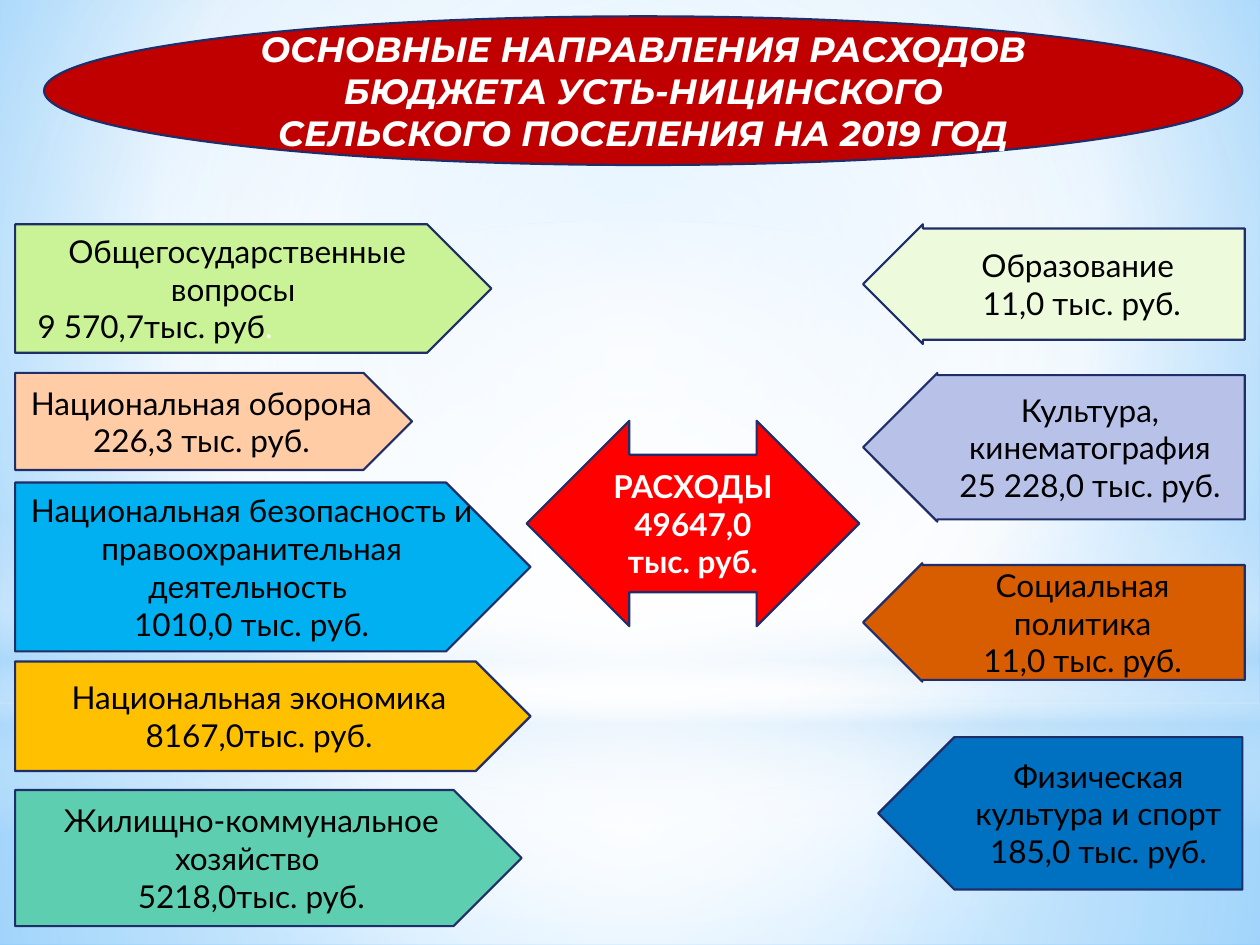
from dataclasses import dataclass

from lxml import etree
from pptx import Presentation
from pptx.dml.color import RGBColor
from pptx.enum.shapes import MSO_SHAPE
from pptx.enum.text import MSO_ANCHOR, MSO_AUTO_SIZE, PP_ALIGN
from pptx.oxml.ns import qn
from pptx.slide import Slide
from pptx.util import Inches, Pt

RECTANGLE, ELLIPSE = MSO_SHAPE.RECTANGLE, MSO_SHAPE.OVAL
PENTAGON, LEFT_ARROW = MSO_SHAPE.PENTAGON, MSO_SHAPE.LEFT_ARROW
DOUBLE_ARROW = MSO_SHAPE.LEFT_RIGHT_ARROW
MIDDLE, NO_FIT = MSO_ANCHOR.MIDDLE, MSO_AUTO_SIZE.NONE
CENTER, LEFT = PP_ALIGN.CENTER, PP_ALIGN.LEFT

BLACK = RGBColor(0x00, 0x00, 0x00)
WHITE = RGBColor(0xFF, 0xFF, 0xFF)
NAVY = RGBColor(0x1F, 0x2E, 0x69)
CRIMSON = RGBColor(0xC0, 0x00, 0x00)
RED = RGBColor(0xFF, 0x00, 0x00)
LIME = RGBColor(0xCA, 0xF2, 0x97)
PEACH = RGBColor(0xFF, 0xCC, 0xA6)
CYAN = RGBColor(0x00, 0xB0, 0xF0)
AMBER = RGBColor(0xFF, 0xC0, 0x00)
MINT = RGBColor(0x5D, 0xCE, 0xAF)
PALE_GREEN = RGBColor(0xED, 0xFB, 0xDC)
LAVENDER = RGBColor(0xB8, 0xC2, 0xE9)
ORANGE = RGBColor(0xD8, 0x5C, 0x00)
BLUE = RGBColor(0x00, 0x70, 0xC0)
PALE_BLUE = RGBColor(0xB4, 0xDC, 0xFA)
SKY = RGBColor(0x9E, 0xD5, 0xFF)
DEEP_SKY = RGBColor(0x5B, 0xB9, 0xFF)

CENTRE_FOCUS = (50, 50, 50, 50)


@dataclass
class BudgetSlide:
    slide: Slide
    body_font: str = "Lato"
    title_font: str = "Montserrat"
    body_size: int = 18
    title_size: int = 20
    line_width: float = 1.25

    def gradient(self, fill, owner, stops, focus=None):
        """Stops are (position %, colour, opacity %); no focus means top to bottom."""
        fill.gradient()
        grad = owner.find(".//" + qn("a:gradFill"))
        for child in list(grad):
            grad.remove(child)
        stop_list = etree.SubElement(grad, qn("a:gsLst"))
        for position, color, opacity in stops:
            stop = etree.SubElement(stop_list, qn("a:gs"), pos=str(position * 1000))
            tint = etree.SubElement(stop, qn("a:srgbClr"), val=str(color))
            if opacity < 100:
                etree.SubElement(tint, qn("a:alpha"), val=str(opacity * 1000))
        if focus is None:
            etree.SubElement(grad, qn("a:lin"), ang="5400000", scaled="0")
        else:
            route = etree.SubElement(grad, qn("a:path"), path="circle")
            sides = {side: str(part * 1000) for side, part in zip("ltrb", focus)}
            etree.SubElement(route, qn("a:fillToRect"), **sides)

    def background(self, stops, focus):
        self.gradient(self.slide.background.fill, self.slide.element, stops, focus)

    def shape(self, kind, area):
        box = self.slide.shapes.add_shape(kind, *map(Inches, area))
        box.shadow.inherit = False
        return box

    def glow(self, kind, area, stops, focus=None):
        box = self.shape(kind, area)
        box.line.fill.background()
        self.gradient(box.fill, box.element, stops, focus)

    def block(self, kind, area, color, adjustments=()):
        box = self.shape(kind, area)
        box.fill.solid()
        box.fill.fore_color.rgb = color
        box.line.color.rgb = NAVY
        box.line.width = Pt(self.line_width)
        for index, value in enumerate(adjustments):
            box.adjustments[index] = value
        frame = box.text_frame
        frame.word_wrap = True
        frame.vertical_anchor = MIDDLE
        return box

    def span(self, para, text, color=BLACK, bold=False):
        span = para.add_run()
        span.text = text
        span.font.name = self.body_font
        span.font.size = Pt(self.body_size)
        span.font.color.rgb = color
        span.font.bold = bold
        return span

    def lines(self, box, texts, color=BLACK, bold=False):
        frame = box.text_frame
        for index, text in enumerate(texts):
            para = frame.add_paragraph() if index else frame.paragraphs[0]
            para.alignment = CENTER
            self.span(para, text, color, bold)
        return frame.paragraphs

    def title(self, text, area):
        oval = self.block(ELLIPSE, area, CRIMSON)
        # The title lies in the rectangle inscribed in the oval
        left, top, width, height = area
        ratio = 0.71
        title = self.slide.shapes.title
        title.left = Inches(left + width * (1 - ratio) / 2)
        title.top = Inches(top + height * (1 - ratio) / 2)
        title.width, title.height = Inches(width * ratio), Inches(height * ratio)
        oval.element.addnext(title.element)
        frame = title.text_frame
        frame.word_wrap = True
        frame.auto_size = NO_FIT
        frame.vertical_anchor = MIDDLE
        para = frame.paragraphs[0]
        para.alignment = CENTER
        span = self.span(para, text, WHITE, True)
        span.font.name = self.title_font
        span.font.size = Pt(self.title_size)
        span.font.italic = True


def main():
    deck = Presentation()
    deck.slide_width, deck.slide_height = Inches(10), Inches(7.5)
    page = BudgetSlide(deck.slides.add_slide(deck.slide_layouts[5]))

    # Backdrop
    page.background([(0, SKY, 100), (60, WHITE, 100), (100, DEEP_SKY, 100)],
                    (20, 10, 20, 60))
    page.glow(RECTANGLE, (0, 5.58, 10, 1.92),
              [(0, WHITE, 91), (37, WHITE, 76), (100, PALE_BLUE, 79)], CENTRE_FOCUS)
    page.glow(RECTANGLE, (0, 0, 10, 5.58),
              [(0, WHITE, 89), (48, WHITE, 62), (100, PALE_BLUE, 79)], CENTRE_FOCUS)
    page.glow(RECTANGLE, (0, 4.12, 10, 2.5),
              [(0, WHITE, 0), (29, WHITE, 30), (45, PALE_BLUE, 40),
               (55, WHITE, 26), (65, PALE_BLUE, 60), (100, WHITE, 0)])
    page.glow(ELLIPSE, (0, 1.75, 10, 5.58),
              [(0, WHITE, 100), (56, WHITE, 0)], CENTRE_FOCUS)

    # Left column: top, width, height, colour, name, amount
    left_items = [
        (1.78, 3.78, 1.02, LIME, "Общегосударственные вопросы ", "9 570,7тыс. руб"),
        (2.96, 3.15, 0.77, PEACH, "Национальная оборона ", "226,3 тыс. руб."),
        (3.83, 4.09, 1.34, CYAN,
         "Национальная безопасность и правоохранительная деятельность ",
         "1010,0 тыс. руб."),
        (5.25, 4.09, 0.87, AMBER, "Национальная экономика", "8167,0тыс. руб."),
        (6.27, 4.02, 1.08, MINT, "Жилищно-коммунальное хозяйство ",
         "5218,0тыс. руб."),
    ]
    amounts = []
    for top, width, height, color, name, amount in left_items:
        box = page.block(PENTAGON, (0.12, top, width, height), color)
        amounts.append(page.lines(box, [name, amount])[-1])

    # The first amount stands at the left and ends in a white full stop
    first = amounts[0]
    first.alignment = LEFT
    first._p.get_or_add_pPr().set("marL", str(Inches(0.08)))
    page.span(first, ".", WHITE)

    # Total in the middle
    total = page.block(DOUBLE_ARROW, (4.18, 3.34, 2.64, 1.63), RED, (0.67, 0.5))
    page.lines(total, ["РАСХОДЫ 49647,0 тыс. руб."], WHITE, True)

    # Right column: area, shaft share, colour, name, amount
    right_items = [
        ((6.85, 1.78, 3.03, 0.95), 0.93, PALE_GREEN, "Образование ", "11,0 тыс. руб."),
        ((6.85, 2.96, 3.03, 1.18), 0.97, LAVENDER, "Культура, кинематография",
         "25 228,0 тыс. руб."),
        ((6.85, 4.47, 3.03, 0.94), 0.97, ORANGE, "Социальная политика",
         "11,0 тыс. руб."),
        ((6.97, 5.85, 2.89, 1.21), 1, BLUE, "Физическая культура и спорт",
         "185,0 тыс. руб."),
    ]
    for area, shaft, color, name, amount in right_items:
        box = page.block(LEFT_ARROW, area, color, (shaft, 0.5))
        page.lines(box, [name, amount])

    # Title
    page.title("ОСНОВНЫЕ НАПРАВЛЕНИЯ РАСХОДОВ БЮДЖЕТА УСТЬ-НИЦИНСКОГО "
               "СЕЛЬСКОГО ПОСЕЛЕНИЯ НА 2019 ГОД", (0.35, 0.13, 9.51, 1.18))

    deck.save("out.pptx")


if __name__ == "__main__":
    main()
